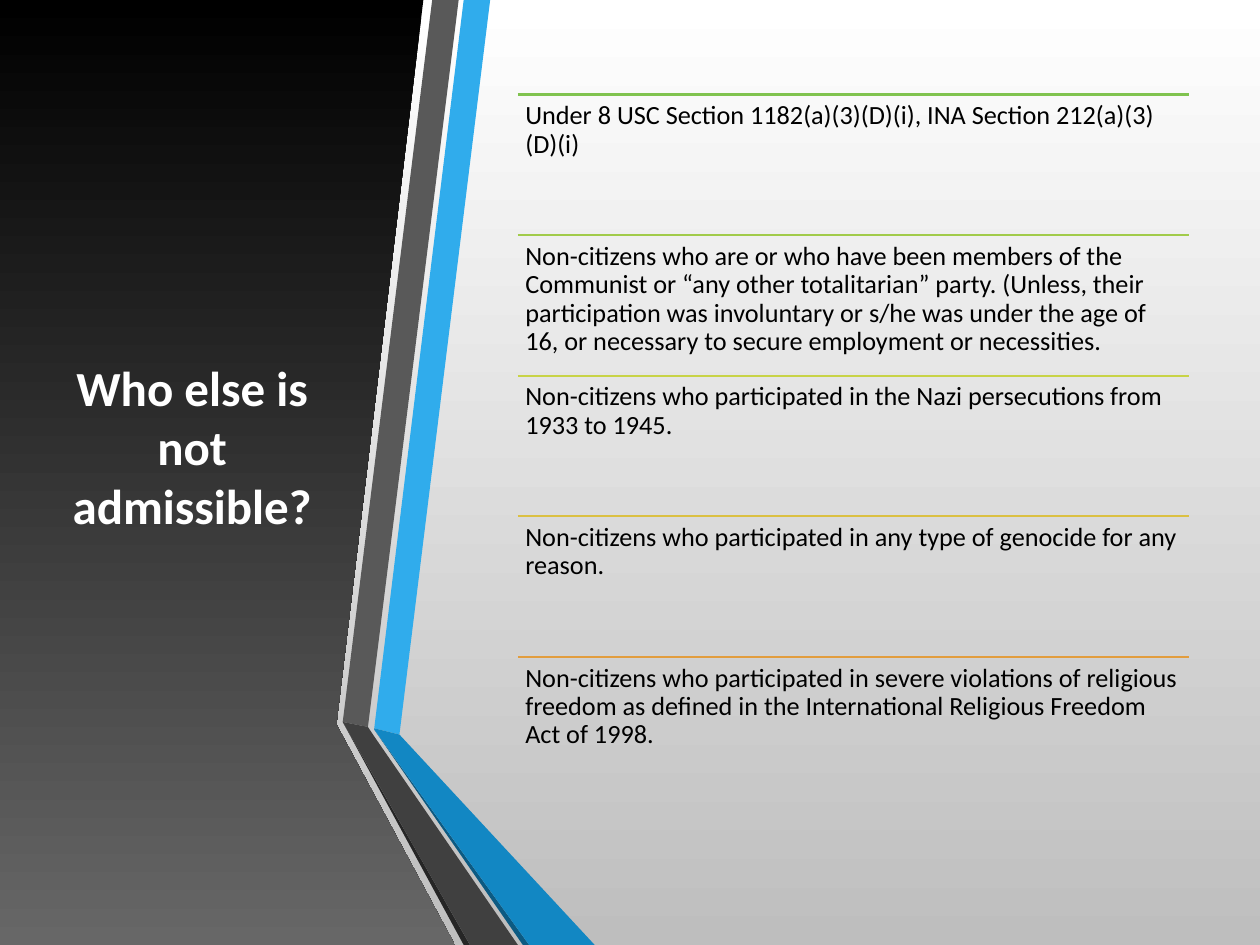
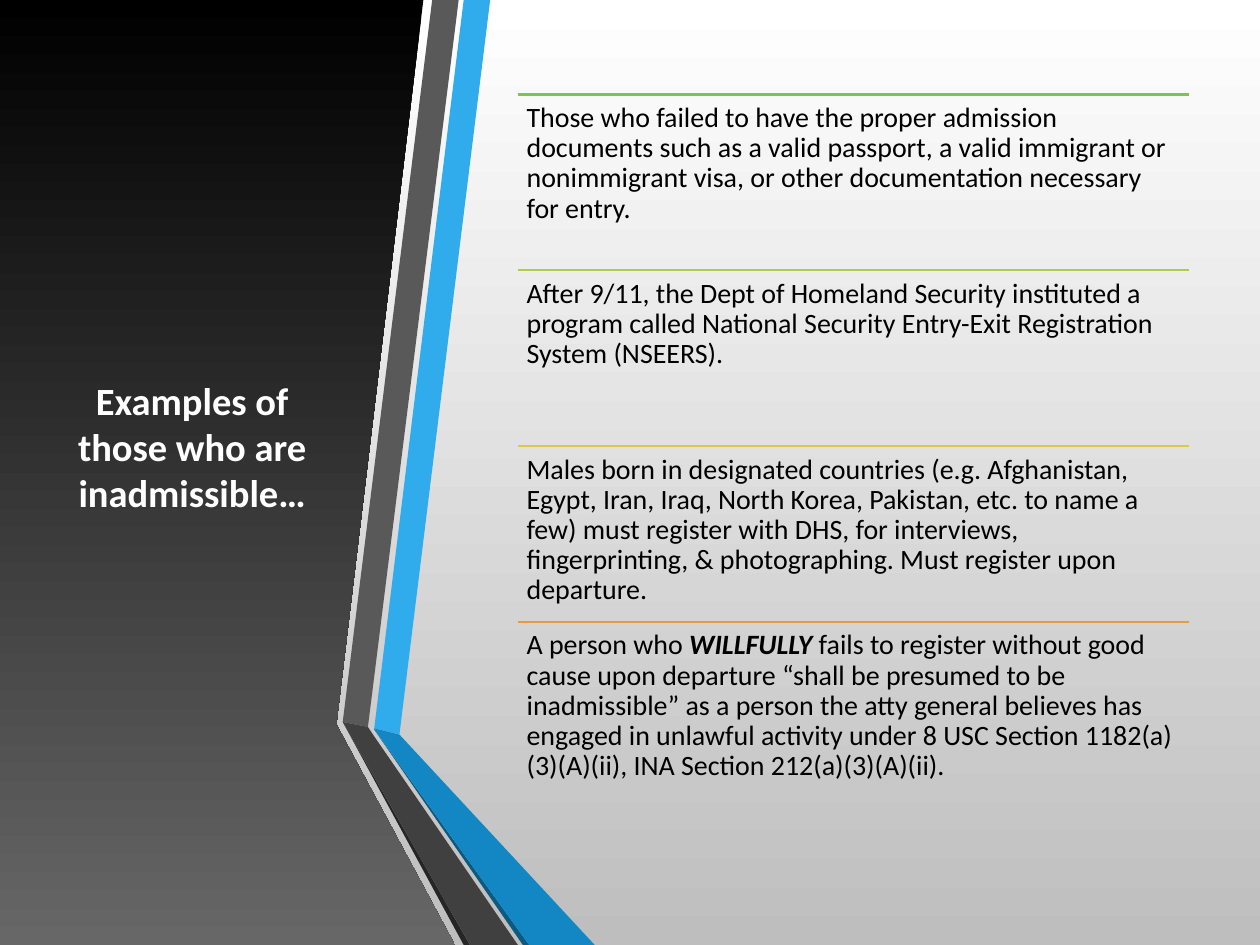
from dataclasses import dataclass

from lxml.etree import SubElement
from pptx import Presentation
from pptx.dml.color import RGBColor
from pptx.dml.fill import FillFormat
from pptx.enum.shapes import MSO_CONNECTOR as Connector
from pptx.enum.text import MSO_ANCHOR as Anchor, PP_ALIGN as Align
from pptx.oxml.ns import qn
from pptx.shapes.freeform import FreeformBuilder
from pptx.shapes.autoshape import Shape
from pptx.shapes.shapetree import GroupShapes, SlideShapes
from pptx.slide import Slide
from pptx.text.text import _Paragraph as Paragraph
from pptx.util import Inches, Pt

FONT = "Calibri"
COLORS = {
    "white": "FFFFFF", "black": "000000",
    "page_end": "BEBEBE", "panel_end": "676767",
    "blue": "30ACEC", "blue_fold": "1287C3", "blue_edge": "0C5A82",
    "gray": "595959", "gray_fold": "404040", "gray_edge": "262626",
    "green": "80C34F", "leaf": "A1CB4A", "lime": "ADCE49", "yellow": "C8D346",
    "mustard": "D8CB43", "gold": "DBC042", "orange": "E29D3E",
}
LIST_LEFT, LIST_TOP = 4.11, 0.75
LIST_WIDTH, LIST_HEIGHT = 5.33, 5.58

Points = list[tuple[float, float]]


@dataclass
class Band:
    color: str
    points: Points


@dataclass
class Phrase:
    text: str
    strong: bool = False


@dataclass
class Rule:
    """A coloured line with the statement that hangs below it."""
    color: str
    phrases: list[Phrase]


@dataclass
class Topic:
    title: str
    title_size: int
    text_size: int
    inset: float
    rules: list[Rule]


PANEL: Points = [(0, 0), (3.36, 0), (2.67, 5.75), (3.61, 7.5), (0, 7.5)]
RIBBON = [
    Band("blue", [(2.97, 5.78), (3.17, 5.83), (3.89, 0), (3.68, 0)]),
    Band("gray", [(3.64, 0), (3.43, 0), (2.72, 5.73), (2.92, 5.77)]),
    Band("gray_edge", [(2.72, 5.73), (3.68, 7.5), (3.73, 7.5)]),
    Band("blue_edge", [(2.97, 5.79), (4.15, 7.5), (4.2, 7.5)]),
    Band("blue_fold", [(2.97, 5.78), (2.97, 5.79), (4.2, 7.5), (4.72, 7.5),
                       (3.17, 5.83)]),
    Band("gray_fold", [(2.72, 5.73), (3.73, 7.5), (4.11, 7.5), (2.96, 5.83),
                       (2.92, 5.77)]),
]

TOPICS = [
    Topic("Who else is not admissible?", 28, 15, 0.06, [
        Rule("green", [Phrase(
            "Under 8 USC Section 1182(a)(3)(D)(i), INA Section 212(a)(3)(D)(i)")]),
        Rule("leaf", [Phrase(
            "Non-citizens who are or who have been members of the Communist or "
            "“any other totalitarian” party. (Unless, their participation was "
            "involuntary or s/he was under the age of 16, or necessary to secure "
            "employment or necessities.")]),
        Rule("yellow", [Phrase(
            "Non-citizens who participated in the Nazi persecutions from 1933 "
            "to 1945.")]),
        Rule("gold", [Phrase(
            "Non-citizens who participated in any type of genocide for any "
            "reason.")]),
        Rule("orange", [Phrase(
            "Non-citizens who participated in severe violations of religious "
            "freedom as defined in the International Religious Freedom Act of "
            "1998.")]),
    ]),
    Topic("Examples of those who are inadmissible…", 22, 16, 0.07, [
        Rule("green", [Phrase(
            "Those who failed to have the proper admission documents such as a "
            "valid passport, a valid immigrant or nonimmigrant visa, or other "
            "documentation necessary for entry.")]),
        Rule("lime", [Phrase(
            "After 9/11, the Dept of Homeland Security instituted a program "
            "called National Security Entry-Exit Registration System (NSEERS).")]),
        Rule("mustard", [Phrase(
            "Males born in designated countries (e.g. Afghanistan, Egypt, Iran, "
            "Iraq, North Korea, Pakistan, etc. to name a few) must register with "
            "DHS, for interviews, fingerprinting, & photographing. Must register "
            "upon departure.")]),
        Rule("orange", [
            Phrase("A person who "),
            Phrase("WILLFULLY", strong=True),
            Phrase(
                " fails to register without good cause upon departure “shall be "
                "presumed to be inadmissible” as a person the atty general "
                "believes has engaged in unlawful activity under 8 USC Section "
                "1182(a)(3)(A)(ii), INA Section 212(a)(3)(A)(ii).")]),
    ]),
]


def rgb(name: str) -> RGBColor:
    return RGBColor.from_string(COLORS[name])


def fill_downward(fill: FillFormat, top: str, bottom: str) -> None:
    """Fill with a gradient that runs from the top colour to the bottom one."""
    fill.gradient()
    fill.gradient_angle = 270
    for stop, color in zip(fill.gradient_stops, (top, bottom)):
        stop.color.rgb = rgb(color)


def add_outline(shapes: SlideShapes | GroupShapes, points: Points) -> Shape:
    corners = [(Inches(x), Inches(y)) for x, y in points]
    builder: FreeformBuilder = shapes.build_freeform(*corners[0])
    builder.add_line_segments(corners[1:], close=True)
    outline = builder.convert_to_shape()
    outline.line.fill.background()
    outline.shadow.inherit = False
    return outline


def add_run(paragraph: Paragraph, text: str, size: int, color: str,
            bold: bool = False, italic: bool = False) -> None:
    run = paragraph.add_run()
    run.text = text
    font = run.font
    font.name, font.size = FONT, Pt(size)
    font.bold, font.italic = bold, italic
    font.color.rgb = rgb(color)


def add_title(slide: Slide, topic: Topic) -> None:
    title = slide.shapes.add_textbox(
        Inches(0.44), Inches(LIST_TOP), Inches(2.17), Inches(LIST_HEIGHT))
    frame = title.text_frame
    frame.word_wrap = True
    frame.vertical_anchor = Anchor.MIDDLE
    paragraph = frame.paragraphs[0]
    paragraph.alignment = Align.CENTER
    add_run(paragraph, topic.title, topic.title_size, "white", bold=True)


def add_ribbon(slide: Slide) -> None:
    ribbon = slide.shapes.add_group_shape()
    for band in RIBBON:
        outline = add_outline(ribbon.shapes, band.points)
        outline.fill.solid()
        outline.fill.fore_color.rgb = rgb(band.color)


def add_rule(shapes: GroupShapes, rule: Rule, topic: Topic,
             top: float, height: float) -> None:
    left, width = Inches(LIST_LEFT), Inches(LIST_WIDTH)
    line = shapes.add_connector(
        Connector.STRAIGHT, left, Inches(top), left + width, Inches(top))
    line.line.color.rgb = rgb(rule.color)
    line.line.width = Pt(1.25)
    SubElement(line._element.spPr, qn("a:effectLst"))

    statement = shapes.add_textbox(left, Inches(top), width, Inches(height))
    frame = statement.text_frame
    frame.word_wrap = True
    frame.margin_left = frame.margin_right = Inches(topic.inset)
    frame.margin_top = frame.margin_bottom = Inches(topic.inset)
    paragraph = frame.paragraphs[0]
    paragraph.line_spacing = 0.9
    for phrase in rule.phrases:
        add_run(paragraph, phrase.text, topic.text_size, "black",
                bold=phrase.strong, italic=phrase.strong)


def add_rules(slide: Slide, topic: Topic) -> None:
    rules = slide.shapes.add_group_shape()
    height = LIST_HEIGHT / len(topic.rules)
    for row, rule in enumerate(topic.rules):
        add_rule(rules.shapes, rule, topic, LIST_TOP + row * height, height)


def add_topic(deck: Presentation, topic: Topic) -> None:
    slide = deck.slides.add_slide(deck.slide_layouts[6])
    fill_downward(slide.background.fill, "white", "page_end")
    panel = add_outline(slide.shapes, PANEL)
    fill_downward(panel.fill, "black", "panel_end")
    add_title(slide, topic)
    add_ribbon(slide)
    add_rules(slide, topic)


def main() -> None:
    deck = Presentation()
    deck.slide_width, deck.slide_height = Inches(10), Inches(7.5)
    for topic in TOPICS:
        add_topic(deck, topic)
    deck.save("out.pptx")


if __name__ == "__main__":
    main()
